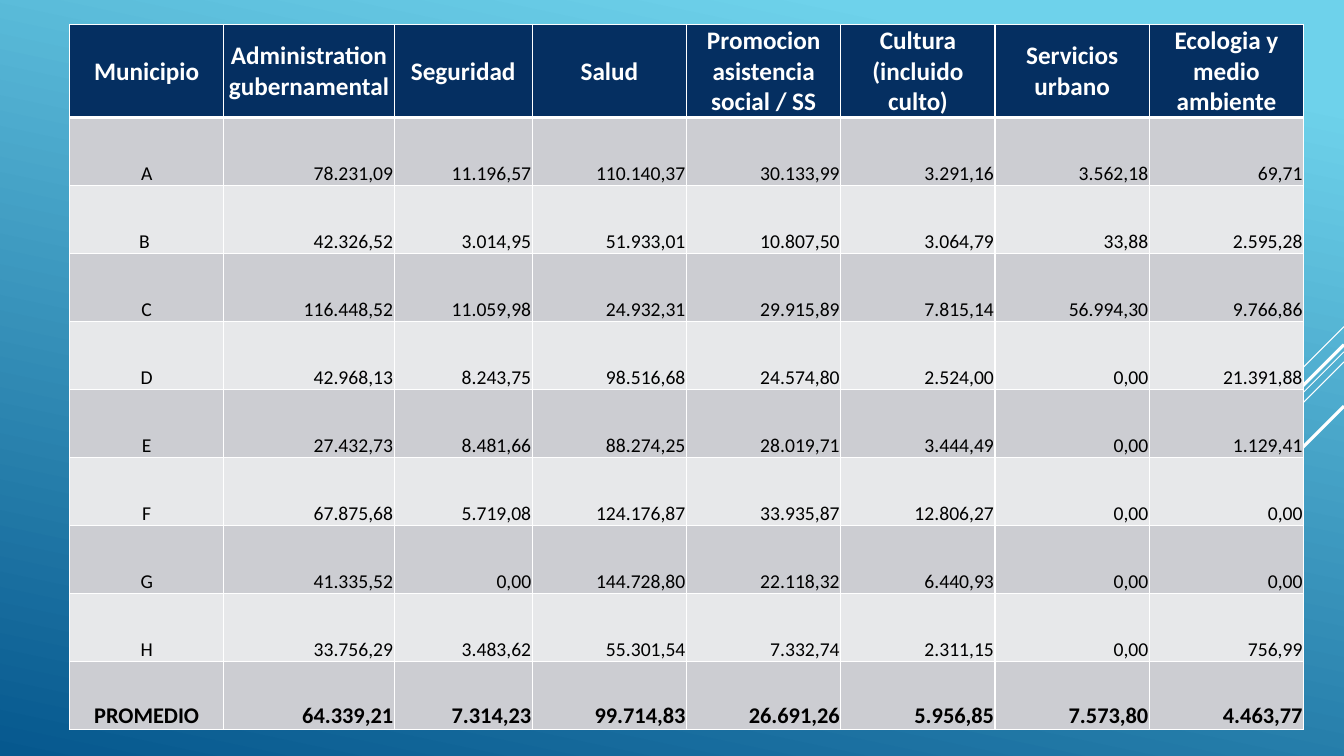
from lxml import etree
from pptx import Presentation
from pptx.dml.color import RGBColor
from pptx.enum.shapes import MSO_CONNECTOR
from pptx.enum.text import MSO_ANCHOR, PP_ALIGN
from pptx.oxml.ns import qn
from pptx.util import Inches, Pt

HEADERS = ["Municipio", "Administration gubernamental", "Seguridad", "Salud",
           "Promocion asistencia social / SS", "Cultura (incluido culto)",
           "Servicios urbano", "Ecologia y medio ambiente"]
MUNICIPALITIES = [
    ["A", "78.231,09", "11.196,57", "110.140,37", "30.133,99", "3.291,16", "3.562,18", "69,71"],
    ["B ", "42.326,52", "3.014,95", "51.933,01", "10.807,50", "3.064,79", "33,88", "2.595,28"],
    ["C", "116.448,52", "11.059,98", "24.932,31", "29.915,89", "7.815,14", "56.994,30", "9.766,86"],
    ["D", "42.968,13", "8.243,75", "98.516,68", "24.574,80", "2.524,00", "0,00", "21.391,88"],
    ["E", "27.432,73", "8.481,66", "88.274,25", "28.019,71", "3.444,49", "0,00", "1.129,41"],
    ["F", "67.875,68", "5.719,08", "124.176,87", "33.935,87", "12.806,27", "0,00", "0,00"],
    ["G", "41.335,52", "0,00", "144.728,80", "22.118,32", "6.440,93", "0,00", "0,00"],
    ["H", "33.756,29", "3.483,62", "55.301,54", "7.332,74", "2.311,15", "0,00", "756,99"],
]
AVERAGES = ["PROMEDIO", "64.339,21", "7.314,23", "99.714,83", "26.691,26",
            "5.956,85", "7.573,80", "4.463,77"]
ROWS = [HEADERS, *MUNICIPALITIES, AVERAGES]

# Diagonals start at the right edge: top, horizontal and vertical run, width in points
DIAGONALS = [(3.24, 1.0, 0.75), (3.49, 3.26, 0.75), (3.59, 2.07, 0.75),
             (3.42, 1.91, 2.25), (4.03, 1.39, 2.25)]

SLIDE_WIDTH, SLIDE_HEIGHT = 13.33, 7.5
TABLE_LEFT, TABLE_TOP, TABLE_WIDTH, TABLE_HEIGHT = 0.69, 0.24, 12.23, 6.99
COLUMN_WIDTHS = [1.53, 1.69, 1.37] + [1.53] * 5
HEADER_HEIGHT = 0.92
BODY_HEIGHT = (TABLE_HEIGHT - HEADER_HEIGHT) / (len(ROWS) - 1)

WHITE = RGBColor(0xFF, 0xFF, 0xFF)
BLACK = RGBColor(0, 0, 0)
NAVY = RGBColor(0x05, 0x2F, 0x61)
DARK_BAND = RGBColor(0xCC, 0xCD, 0xD2)
LIGHT_BAND = RGBColor(0xE7, 0xE8, 0xEA)
SKY = RGBColor(0x6E, 0xD2, 0xEB)
OCEAN = RGBColor(0x06, 0x58, 0x8E)
FONT = "Calibri"

STRAIGHT = MSO_CONNECTOR.STRAIGHT
MIDDLE, BOTTOM = MSO_ANCHOR.MIDDLE, MSO_ANCHOR.BOTTOM
CENTER, RIGHT = PP_ALIGN.CENTER, PP_ALIGN.RIGHT


def paint_background(slide):
    fill = slide.background.fill
    fill.gradient()
    fill.gradient_angle = 360 - 102
    for stop, position, color in zip(fill.gradient_stops, (0.1, 1), (SKY, OCEAN)):
        stop.position = position
        stop.color.rgb = color


def add_diagonal(slide, top, run, width):
    line = slide.shapes.add_connector(
        STRAIGHT, Inches(SLIDE_WIDTH), Inches(top),
        Inches(SLIDE_WIDTH - run), Inches(top + run))
    line.line.color.rgb = WHITE
    line.line.width = Pt(width)
    etree.SubElement(line._element.spPr, qn("a:effectLst"))


def add_borders(cell, top, bottom):
    """Draw white cell borders; must run before the cell's fill is set."""
    properties = cell._tc.get_or_add_tcPr()
    for side, width in (("L", 1), ("R", 1), ("T", top), ("B", bottom)):
        border = etree.SubElement(properties, qn(f"a:ln{side}"), w=str(Pt(width)))
        solid = etree.SubElement(border, qn("a:solidFill"))
        etree.SubElement(solid, qn("a:srgbClr"), val=str(WHITE))


def format_cell(cell, text, row, column):
    is_header, is_average = row == 0, row == len(ROWS) - 1
    add_borders(cell, top=3 if row == 1 else 1, bottom=3 if is_header else 1)
    cell.fill.solid()
    cell.fill.fore_color.rgb = NAVY if is_header else DARK_BAND if row % 2 else LIGHT_BAND
    cell.margin_left = cell.margin_right = cell.margin_top = Inches(0.01)
    cell.margin_bottom = 0
    cell.vertical_anchor = MIDDLE if is_header else BOTTOM

    cell.text_frame.text = text
    para = cell.text_frame.paragraphs[0]
    para.alignment = CENTER if is_header or column == 0 else RIGHT
    if not (is_header or is_average):
        para.line_spacing = 2.0
    font = para.runs[0].font
    font.name = FONT
    font.size = Pt(18 if is_header else 16 if is_average else 14)
    font.bold = is_header or is_average
    font.color.rgb = WHITE if is_header else BLACK


def add_spending_table(slide):
    table = slide.shapes.add_table(
        len(ROWS), len(HEADERS), Inches(TABLE_LEFT), Inches(TABLE_TOP),
        Inches(TABLE_WIDTH), Inches(TABLE_HEIGHT)).table
    for column, width in zip(table.columns, COLUMN_WIDTHS):
        column.width = Inches(width)
    for row, texts in enumerate(ROWS):
        table.rows[row].height = Inches(BODY_HEIGHT if row else HEADER_HEIGHT)
        for column, text in enumerate(texts):
            format_cell(table.cell(row, column), text, row, column)


def main():
    deck = Presentation()
    deck.slide_width = Inches(SLIDE_WIDTH)
    deck.slide_height = Inches(SLIDE_HEIGHT)
    slide = deck.slides.add_slide(deck.slide_layouts[6])
    paint_background(slide)
    for diagonal in DIAGONALS:
        add_diagonal(slide, *diagonal)
    add_spending_table(slide)
    deck.save("out.pptx")


if __name__ == "__main__":
    main()
